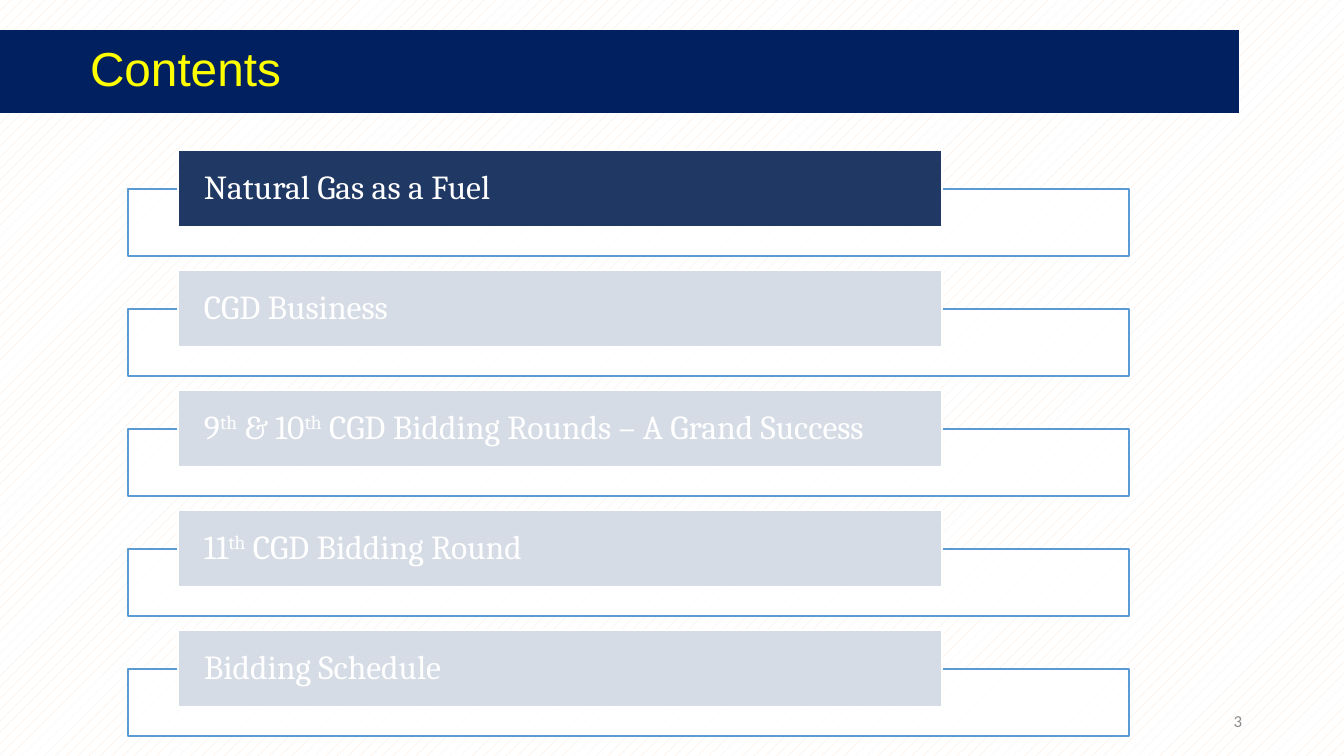
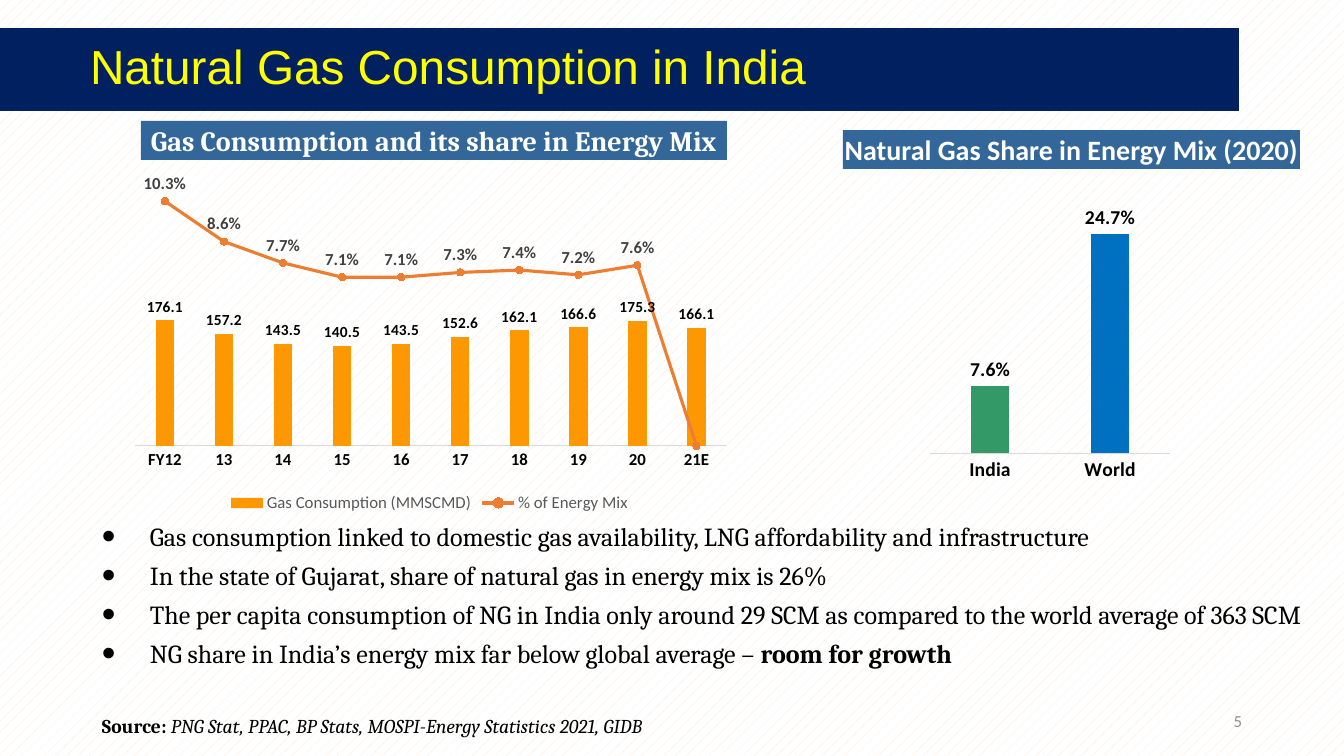
import dataclasses

import pptx
import pptx.chart.data
import pptx.dml.color
import pptx.enum.chart
import pptx.enum.dml
import pptx.enum.shapes
import pptx.enum.text
import pptx.oxml
import pptx.oxml.ns
import pptx.util


@dataclasses.dataclass(frozen=True)
class Theme:
    white: str = "FFFFFF"
    black: str = "000000"
    peach: str = "FBE5D6"
    navy: str = "002060"
    yellow: str = "FFFF00"
    active: str = "203864"
    faded: str = "D6DCE5"
    frame: str = "5B9BD5"
    heading: str = "336699"
    number: str = "8C8C8C"
    legend: str = "595959"
    line_label: str = "404040"
    axis: str = "D9D9D9"
    amber: str = "FD9803"
    orange: str = "ED7D31"
    green: str = "339966"
    blue: str = "0070C0"
    title_face: str = "Arial"
    text_face: str = "Cambria"
    chart_face: str = "Calibri"
    title_size: float = 34.1
    item_size: float = 24
    heading_size: float = 20
    bullet_size: float = 18.6
    source_size: float = 14
    small_size: float = 12


THEME = Theme()
EMU_PER_PX = 12192000 / 1344
RGB = pptx.dml.color.RGBColor.from_string
PT = pptx.util.Pt
ALIGN = pptx.enum.text.PP_ALIGN
MIDDLE = pptx.enum.text.MSO_ANCHOR.MIDDLE
RECTANGLE = pptx.enum.shapes.MSO_SHAPE.RECTANGLE
CHART = pptx.enum.chart
NAMESPACES = pptx.oxml.ns.nsdecls("c", "a")


def px(*lengths):
    return [pptx.util.Emu(round(length * EMU_PER_PX)) for length in lengths]


def write(para, text, face, size, colour, spacing=1.0, align=ALIGN.LEFT, raised=False):
    para.alignment = align
    para.line_spacing = spacing
    para.font.name = face
    para.font.size = PT(size)
    para.font.color.rgb = RGB(colour)
    for index, part in enumerate(text.split("|")):
        if not part:
            continue
        span = para.add_run()
        span.text = part
        if index % 2 and raised:
            span._r.get_or_add_rPr().set("baseline", "30000")
        elif index % 2:
            span.font.bold = True
            span.font.italic = False


deck = pptx.Presentation()
deck.slide_width, deck.slide_height = px(1344, 756)
backdrop = deck.slide_master.background.fill
backdrop.patterned()
backdrop.pattern = pptx.enum.dml.MSO_PATTERN.PERCENT_10
backdrop.fore_color.rgb = RGB(THEME.peach)
backdrop.back_color.rgb = RGB(THEME.white)

pages = []
for title, top, number in (("Contents", 30, "3"), ("Natural Gas Consumption in India", 28, "5")):
    page = deck.slides.add_slide(deck.slide_layouts[5])
    band = page.shapes.title
    band.left, band.top, band.width, band.height = px(0, top, 1239, 83)
    band.fill.solid()
    band.fill.fore_color.rgb = RGB(THEME.navy)
    frame = band.text_frame
    frame.auto_size = pptx.enum.text.MSO_AUTO_SIZE.NONE
    frame.vertical_anchor = MIDDLE
    frame.margin_left = px(90)[0]
    write(frame.paragraphs[0], title, THEME.title_face, THEME.title_size, THEME.yellow, 0.9)

    box = page.shapes.add_textbox(*px(950, 701, 302, 40))
    box.text_frame.word_wrap = True
    box.text_frame.vertical_anchor = MIDDLE
    write(box.text_frame.paragraphs[0], number, THEME.chart_face, THEME.small_size,
          THEME.number, align=ALIGN.RIGHT)
    pages.append(page)

contents, consumption = pages

items = (
    "Natural Gas as a Fuel",
    "CGD Business",
    "9|th| & 10|th| CGD Bidding Rounds – A Grand Success",
    "11|th| CGD Bidding Round",
    "Bidding Schedule",
)
for row, item in enumerate(items):
    top = 150 + 120 * row
    label_fill = THEME.faded if row else THEME.active
    for area, fill, line in (
        ((128, top + 39, 1001, 67), THEME.white, THEME.frame),
        ((178, top, 764, 77), label_fill, THEME.white),
    ):
        box = contents.shapes.add_shape(RECTANGLE, *px(*area))
        box.shadow.inherit = False
        box.fill.solid()
        box.fill.fore_color.rgb = RGB(fill)
        box.line.color.rgb = RGB(line)
        box.line.width = PT(1)
        if line == THEME.frame:
            tint = box._element.spPr.find(".//" + pptx.oxml.ns.qn("a:srgbClr"))
            tint.append(pptx.oxml.parse_xml(f'<a:alpha {NAMESPACES} val="90000"/>'))
    frame = box.text_frame
    frame.word_wrap = True
    frame.vertical_anchor = MIDDLE
    frame.margin_left, frame.margin_top, frame.margin_right, frame.margin_bottom = px(26, 0, 26, 0)
    write(frame.paragraphs[0], item, THEME.text_face, THEME.item_size, THEME.white, 0.9, raised=True)

years = ["FY12", "13", "14", "15", "16", "17", "18", "19", "20", "21E"]
gas = [176.1, 157.2, 143.5, 140.5, 143.5, 152.6, 162.1, 166.6, 175.3, 166.1]
share = [0.103, 0.086, 0.077, 0.071, 0.071, 0.073, 0.074, 0.072, 0.076, None]
charts = []
for area, plot_box, categories, series_list, top_value, axis_size, label_size in (
    ((125, 149, 609, 368), (0.017, 0.032, 0.97, 0.775), years,
     (("Gas Consumption (MMSCMD)", gas, "0.0"), ("% of Energy Mix", share, "0.0%")), 400, 12, 11),
    ((851, 153, 426, 339), (0.186, 0.099, 0.563, 0.787), ["India", "World"],
     (("Series 1", [0.076, 0.247], "0.0%"),), 0.3, 14, 14),
):
    data = pptx.chart.data.CategoryChartData()
    data.categories = categories
    for name, values, number_format in series_list:
        data.add_series(name, values, number_format)
    chart = consumption.shapes.add_chart(
        CHART.XL_CHART_TYPE.COLUMN_CLUSTERED, *px(*area), data).chart
    chart.has_title = False
    chart.has_legend = False
    plot = chart.plots[0]
    plot.gap_width = 219
    plot.overlap = -27
    plot.vary_by_categories = False

    value_axis = chart.value_axis
    value_axis.minimum_scale = 0
    value_axis.maximum_scale = top_value
    value_axis.has_major_gridlines = False
    value_axis.tick_label_position = CHART.XL_TICK_LABEL_POSITION.NONE
    value_axis.major_tick_mark = CHART.XL_TICK_MARK.NONE
    value_axis.format.line.fill.background()
    category_axis = chart.category_axis
    category_axis.major_tick_mark = CHART.XL_TICK_MARK.NONE
    category_axis.format.line.color.rgb = RGB(THEME.axis)
    category_axis.format.line.width = PT(0.75)

    columns = plot.series[0]
    columns.format.fill.solid()
    columns.format.fill.fore_color.rgb = RGB(THEME.amber)
    labels = columns.data_labels
    labels.show_value = True
    labels.position = CHART.XL_LABEL_POSITION.OUTSIDE_END
    labels.number_format = series_list[0][2]
    labels.number_format_is_linked = False
    for font, size, bold in (
        (chart.font, 10, False),
        (category_axis.tick_labels.font, axis_size, True),
        (labels.font, label_size, True),
    ):
        font.name = THEME.chart_face
        font.size = PT(size)
        font.bold = bold
        font.color.rgb = RGB(THEME.black)

    plot_area = chart._chartSpace.chart.plotArea
    for layout in plot_area.findall(pptx.oxml.ns.qn("c:layout")):
        plot_area.remove(layout)
    places = "".join(f'<c:{key} val="{value}"/>' for key, value in zip("xywh", plot_box))
    plot_area.insert(0, pptx.oxml.parse_xml(
        f'<c:layout {NAMESPACES}><c:manualLayout><c:layoutTarget val="inner"/>'
        f'<c:xMode val="edge"/><c:yMode val="edge"/>{places}</c:manualLayout></c:layout>'))
    charts.append(chart)

mix_chart, share_chart = charts
share_chart.value_axis.visible = False
for index, colour in enumerate((THEME.green, THEME.blue)):
    fill = share_chart.plots[0].series[0].points[index].format.fill
    fill.solid()
    fill.fore_color.rgb = RGB(colour)

plot_area = mix_chart._chartSpace.chart.plotArea
line_plot = pptx.oxml.parse_xml(
    f'<c:lineChart {NAMESPACES}><c:grouping val="stacked"/><c:varyColors val="0"/>'
    '<c:marker val="1"/><c:axId val="5001"/><c:axId val="5002"/></c:lineChart>')
mix_series = plot_area.findall(".//" + pptx.oxml.ns.qn("c:ser"))[1]
for flag in mix_series.findall(pptx.oxml.ns.qn("c:invertIfNegative")):
    mix_series.remove(flag)
plot_area.find(pptx.oxml.ns.qn("c:barChart")).addnext(line_plot)
line_plot.insert(2, mix_series)
for kind, own, other, limits, hidden, side, crossing in (
    ("valAx", 5002, 5001, '<c:max val="0.12"/><c:min val="0"/>', 0, "r", "max"),
    ("catAx", 5001, 5002, "", 1, "b", "autoZero"),
):
    plot_area.append(pptx.oxml.parse_xml(
        f'<c:{kind} {NAMESPACES}><c:axId val="{own}"/>'
        f'<c:scaling><c:orientation val="minMax"/>{limits}</c:scaling>'
        f'<c:delete val="{hidden}"/><c:axPos val="{side}"/>'
        '<c:majorTickMark val="none"/><c:minorTickMark val="none"/><c:tickLblPos val="none"/>'
        '<c:spPr><a:ln><a:noFill/></a:ln></c:spPr>'
        f'<c:crossAx val="{other}"/><c:crosses val="{crossing}"/></c:{kind}>'))
for blanks in mix_chart._chartSpace.chart.findall(pptx.oxml.ns.qn("c:dispBlanksAs")):
    blanks.set("val", "zero")

mix_line = mix_chart.plots[1].series[0]
mix_line.smooth = False
mix_line.format.line.color.rgb = RGB(THEME.orange)
mix_line.format.line.width = PT(2.25)
mix_line.marker.style = CHART.XL_MARKER_STYLE.CIRCLE
mix_line.marker.size = 5
mix_line.marker.format.fill.solid()
mix_line.marker.format.fill.fore_color.rgb = RGB(THEME.orange)
mix_line.marker.format.line.color.rgb = RGB(THEME.orange)
labels = mix_line.data_labels
labels.show_value = True
labels.position = CHART.XL_LABEL_POSITION.ABOVE
labels.number_format = "0.0%"
labels.number_format_is_linked = False
labels._element.insert(0, pptx.oxml.parse_xml(
    f'<c:dLbl {NAMESPACES}><c:idx val="9"/><c:delete val="1"/></c:dLbl>'))

mix_chart.has_legend = True
mix_chart.legend.position = CHART.XL_LEGEND_POSITION.BOTTOM
mix_chart.legend.include_in_layout = False
for font, colour, bold in (
    (labels.font, THEME.line_label, True),
    (mix_chart.legend.font, THEME.legend, False),
):
    font.name = THEME.chart_face
    font.size = PT(THEME.small_size)
    font.bold = bold
    font.color.rgb = RGB(colour)

for heading, area, face in (
    ("Gas Consumption and its share in Energy Mix", (141, 121, 586, 39), THEME.text_face),
    ("Natural Gas Share in Energy Mix (2020)", (843, 130, 457, 39), THEME.chart_face),
):
    box = consumption.shapes.add_shape(RECTANGLE, *px(*area))
    box.shadow.inherit = False
    box.fill.solid()
    box.fill.fore_color.rgb = RGB(THEME.heading)
    box.line.fill.background()
    frame = box.text_frame
    frame.word_wrap = False
    frame.vertical_anchor = MIDDLE
    frame.margin_left, frame.margin_top, frame.margin_right, frame.margin_bottom = px(0, 4, 0, 0)
    para = frame.paragraphs[0]
    write(para, heading, face, THEME.heading_size, THEME.white, 0.85, ALIGN.CENTER)
    para.font.bold = True

points = (
    "Gas consumption linked to domestic gas availability, LNG affordability and infrastructure",
    "In the state of Gujarat, share of natural gas in energy mix is 26%",
    "The per capita consumption of NG in India only around 29 SCM as compared to the world average of 363 SCM",
    "NG share in India’s energy mix far below global average – |room for growth",
)
frame = consumption.shapes.add_textbox(*px(92, 522, 1227, 185)).text_frame
frame.word_wrap = True
hang = px(48)[0]
for index, point in enumerate(points):
    para = frame.add_paragraph() if index else frame.paragraphs[0]
    properties = para._p.get_or_add_pPr()
    properties.set("marL", str(hang))
    properties.set("indent", str(-hang))
    for bullet in ('buSzPct {} val="150000"', 'buFont {} typeface="Arial"', 'buChar {} char="•"'):
        properties.append(pptx.oxml.parse_xml(f"<a:{bullet.format(NAMESPACES)}/>"))
    write(para, point, THEME.text_face, THEME.bullet_size, THEME.black, 0.8)
    if index:
        para.space_before = PT(10)

frame = consumption.shapes.add_textbox(*px(92, 709, 1227, 46)).text_frame
frame.word_wrap = True
para = frame.paragraphs[0]
write(para, "|Source: |PNG Stat, PPAC, BP Stats, MOSPI-Energy Statistics 2021, GIDB",
      THEME.text_face, THEME.source_size, THEME.black)
para.font.italic = True

deck.save("out.pptx")
